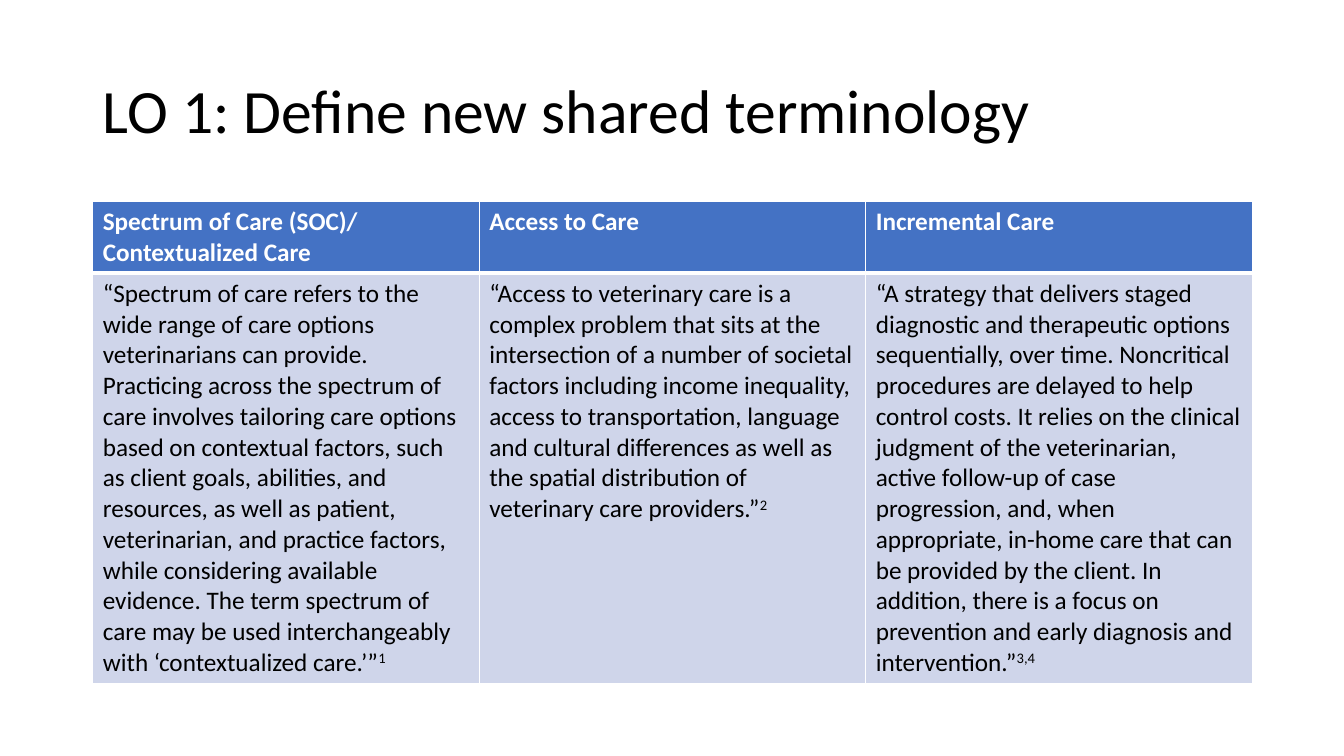
from dataclasses import dataclass

from lxml.etree import SubElement
from pptx import Presentation
from pptx.dml.color import RGBColor
from pptx.enum.text import MSO_ANCHOR, PP_ALIGN
from pptx.oxml.ns import qn
from pptx.slide import Slide
from pptx.table import _Cell
from pptx.text.text import _Run
from pptx.util import Inches, Pt

FONT = "Calibri"
BLACK = RGBColor(0x00, 0x00, 0x00)
WHITE = RGBColor(0xFF, 0xFF, 0xFF)
HEADER_BLUE = RGBColor(0x44, 0x72, 0xC4)
BODY_BLUE = RGBColor(0xCF, 0xD5, 0xEA)
LEFT, WIDTH = Inches(0.92), Inches(11.5)
HEADER_HEIGHT, BODY_HEIGHT = Inches(0.7), Inches(4.06)


@dataclass(frozen=True)
class Term:
    name: str
    definition: str
    reference: str


TERMS = [
    Term(
        "Spectrum of Care (SOC)/ Contextualized Care",
        "“Spectrum of care refers to the wide range of care options "
        "veterinarians can provide. Practicing across the spectrum of care "
        "involves tailoring care options based on contextual factors, such as "
        "client goals, abilities, and resources, as well as patient, "
        "veterinarian, and practice factors, while considering available "
        "evidence. The term spectrum of care may be used interchangeably with "
        "‘contextualized care.’”",
        "1",
    ),
    Term(
        "Access to Care",
        "“Access to veterinary care is a complex problem that sits at the "
        "intersection of a number of societal factors including income "
        "inequality, access to transportation, language and cultural "
        "differences as well as the spatial distribution of veterinary care "
        "providers.”",
        "2",
    ),
    Term(
        "Incremental Care",
        "“A strategy that delivers staged diagnostic and therapeutic options "
        "sequentially, over time. Noncritical procedures are delayed to help "
        "control costs. It relies on the clinical judgment of the "
        "veterinarian, active follow-up of case progression, and, when "
        "appropriate, in-home care that can be provided by the client. In "
        "addition, there is a focus on prevention and early diagnosis and "
        "intervention.”",
        "3,4",
    ),
]


def format_run(r: _Run, size: int, color: RGBColor, bold: bool = False) -> None:
    r.font.name = FONT
    r.font.size = Pt(size)
    r.font.bold = bold
    r.font.color.rgb = color


def set_borders(cell: _Cell, top: int, bottom: int) -> None:
    tc_pr = cell._tc.get_or_add_tcPr()
    for side, width in (("L", 1), ("R", 1), ("T", top), ("B", bottom)):
        line = SubElement(tc_pr, qn(f"a:ln{side}"), w=str(Pt(width)))
        fill = SubElement(line, qn("a:solidFill"))
        SubElement(fill, qn("a:srgbClr"), val=str(WHITE))


def fill_cell(cell: _Cell, color: RGBColor) -> None:
    cell.fill.solid()
    cell.fill.fore_color.rgb = color


def add_title(s: Slide, text: str) -> None:
    title = s.shapes.title
    title.left, title.top = LEFT, Inches(0.4)
    title.width, title.height = WIDTH, Inches(1.45)
    tf = title.text_frame
    tf.text = text
    tf.vertical_anchor = MSO_ANCHOR.MIDDLE
    p = tf.paragraphs[0]
    p.alignment = PP_ALIGN.LEFT
    p.line_spacing = 0.9
    format_run(p.runs[0], 44, BLACK)


def add_terms(s: Slide, terms: list[Term]) -> None:
    table = s.shapes.add_table(
        2, len(terms), LEFT, Inches(2), WIDTH, HEADER_HEIGHT + BODY_HEIGHT
    ).table
    table.rows[0].height = HEADER_HEIGHT
    table.rows[1].height = BODY_HEIGHT
    for column, term in enumerate(terms):
        header, body = table.cell(0, column), table.cell(1, column)
        set_borders(header, 1, 3)
        set_borders(body, 3, 1)
        fill_cell(header, HEADER_BLUE)
        fill_cell(body, BODY_BLUE)

        header.text_frame.text = term.name
        format_run(header.text_frame.paragraphs[0].runs[0], 18, WHITE, True)

        p = body.text_frame.paragraphs[0]
        p.text = term.definition
        reference = p.add_run()
        reference.text = term.reference
        for r in p.runs:
            format_run(r, 18, BLACK)
        reference.font._element.set("baseline", "30000")


def main() -> None:
    prs = Presentation()
    prs.slide_width, prs.slide_height = Inches(13.33), Inches(7.5)
    s = prs.slides.add_slide(prs.slide_layouts[5])
    add_title(s, "LO 1: Define new shared terminology")
    add_terms(s, TERMS)
    prs.save("out.pptx")


if __name__ == "__main__":
    main()
